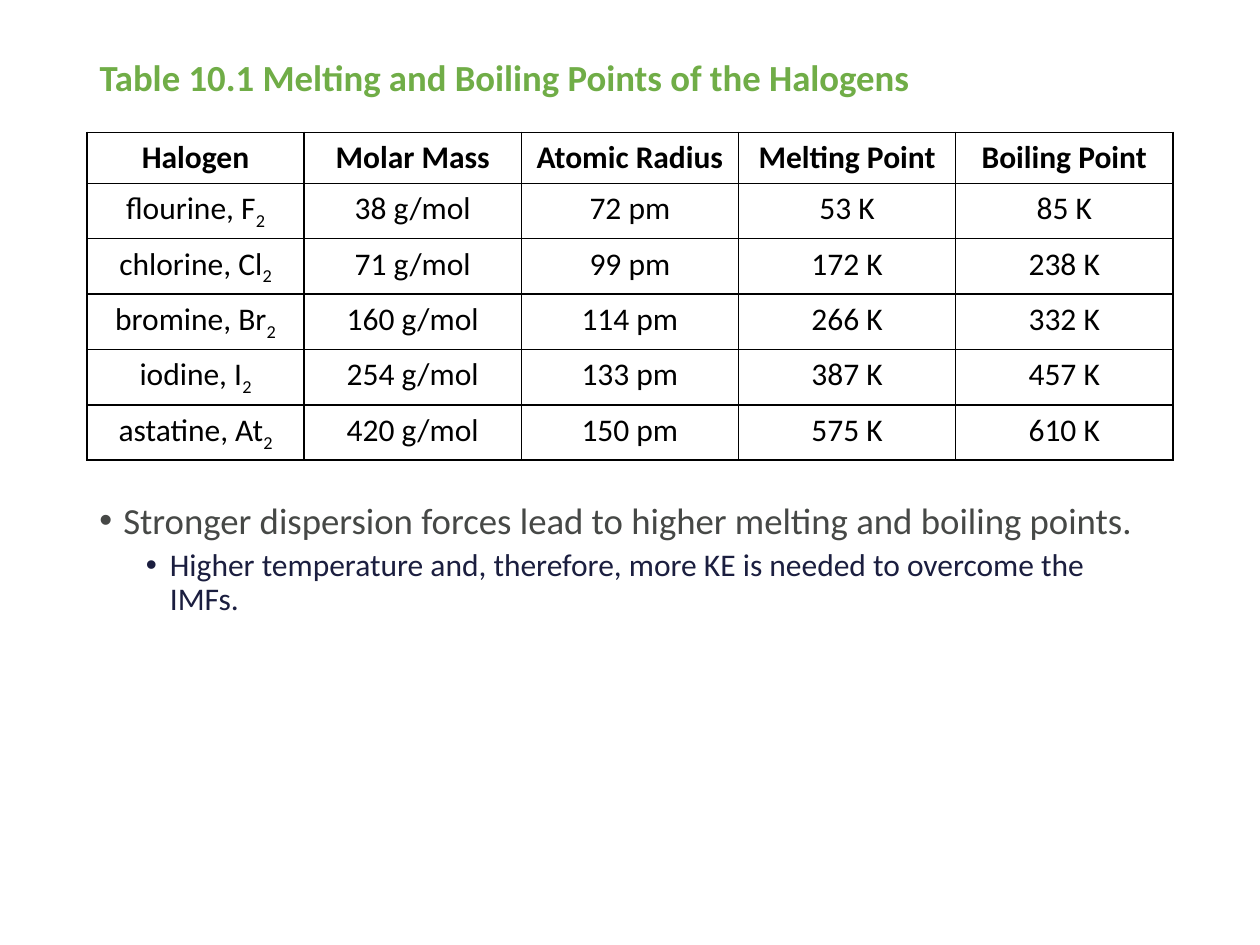
from lxml import etree
from pptx import Presentation
from pptx import util as u
from pptx.dml.color import RGBColor
from pptx.enum import text
from pptx.oxml.ns import qn

LEFT, WIDTH = u.Inches(0.69), u.Inches(8.62)
HEADERS = ["Halogen", "Molar Mass", "Atomic Radius", "Melting Point", "Boiling Point"]
HALOGENS = [
    ["flourine, F", "38 g/mol", "72 pm", "53 K", "85 K"],
    ["chlorine, Cl", "71 g/mol", "99 pm", "172 K", "238 K"],
    ["bromine, Br", "160 g/mol", "114 pm", "266 K", "332 K"],
    ["iodine, I", "254 g/mol", "133 pm", "387 K", "457 K"],
    ["astatine, At", "420 g/mol", "150 pm", "575 K", "610 K"],
]


def color(value):
    return RGBColor.from_string(value)


def apply(target, values):
    for name, value in values.items():
        setattr(target, name, value)


def add_run(paragraph, content, size, hex_color, bold=False):
    run = paragraph.add_run()
    run.text = content
    apply(run.font, {"name": "Calibri", "size": u.Pt(size), "bold": bold})
    run.font.color.rgb = color(hex_color)
    return run


def add_title(slide, content):
    title = slide.shapes.title
    apply(title, {"left": LEFT, "top": u.Inches(0.4),
                  "width": WIDTH, "height": u.Inches(0.46)})
    apply(title.text_frame, {"vertical_anchor": text.MSO_ANCHOR.MIDDLE,
                             "auto_size": text.MSO_AUTO_SIZE.NONE, "word_wrap": True})
    paragraph = title.text_frame.paragraphs[0]
    apply(paragraph, {"alignment": text.PP_ALIGN.LEFT, "line_spacing": 0.9})
    add_run(paragraph, content, 21, "70AD47", bold=True)


def add_borders(cell):
    """Draw a thin black line on each side of the cell."""
    properties = cell._tc.get_or_add_tcPr()
    for position, side in enumerate(("lnL", "lnR", "lnT", "lnB")):
        line = etree.Element(qn(f"a:{side}"), w=str(u.Pt(1)))
        fill = etree.SubElement(line, qn("a:solidFill"))
        etree.SubElement(fill, qn("a:srgbClr"), val="000000")
        properties.insert(position, line)


def add_halogen_table(slide):
    rows = [HEADERS] + HALOGENS
    table = slide.shapes.add_table(len(rows), len(HEADERS), LEFT, u.Inches(1.05),
                                   WIDTH, u.Inches(2.43)).table
    apply(table, {"first_row": False, "horz_banding": False})
    for row_index, row in enumerate(rows):
        for column_index, content in enumerate(row):
            cell = table.cell(row_index, column_index)
            cell.fill.background()
            add_borders(cell)
            paragraph = cell.text_frame.paragraphs[0]
            paragraph.alignment = text.PP_ALIGN.CENTER
            add_run(paragraph, content, 18, "000000", bold=row_index == 0)
            if row_index and column_index == 0:
                subscript = add_run(paragraph, "2", 18, "000000")
                subscript.font._element.set("baseline", "-25000")


def add_bullet(paragraph, content, level, indent, size, hex_color):
    properties = paragraph._p.get_or_add_pPr()
    properties.set("marL", str(u.Inches(indent)))
    properties.set("indent", str(u.Inches(-0.19)))
    etree.SubElement(properties, qn("a:buFont"), typeface="Arial")
    etree.SubElement(properties, qn("a:buChar"), char="•")
    apply(paragraph, {"level": level, "line_spacing": 0.9})
    add_run(paragraph, content, size, hex_color)


def add_conclusions(slide):
    frame = slide.shapes.add_textbox(LEFT, u.Inches(3.94), WIDTH, u.Inches(2.61)).text_frame
    frame.word_wrap = True
    add_bullet(frame.paragraphs[0],
               "Stronger dispersion forces lead to higher melting and boiling points.",
               0, 0.19, 21, "464846")
    detail = frame.add_paragraph()
    add_bullet(detail,
               "Higher temperature and, therefore, more KE is needed to overcome the IMFs.",
               1, 0.56, 18, "1B1E3F")
    detail.space_before = u.Pt(3.8)


def main():
    presentation = Presentation()
    apply(presentation, {"slide_width": u.Inches(10), "slide_height": u.Inches(7.5)})
    slide = presentation.slides.add_slide(presentation.slide_layouts[5])
    add_title(slide, "Table 10.1 Melting and Boiling Points of the Halogens")
    add_halogen_table(slide)
    add_conclusions(slide)
    presentation.save("out.pptx")


if __name__ == "__main__":
    main()
